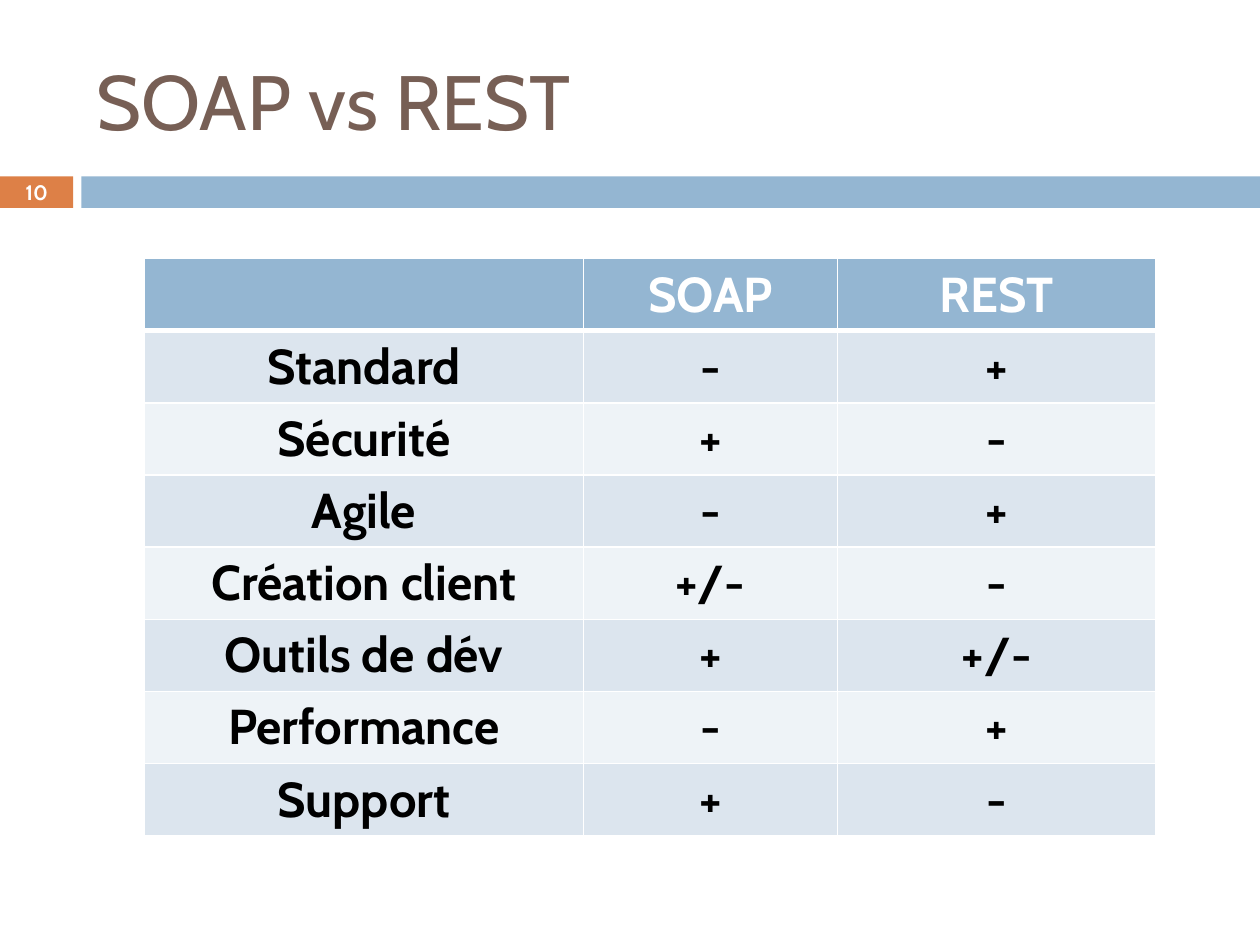
"""Build the SOAP vs REST comparison slide."""
from lxml.etree import SubElement
from pptx import Presentation
from pptx.dml.color import RGBColor as Rgb
from pptx.enum.shapes import MSO_SHAPE as Shape
from pptx.enum.text import MSO_ANCHOR as Anchor, PP_ALIGN as Align
from pptx.oxml.ns import qn
from pptx.util import Pt

TITLE = "SOAP vs REST"
PAGE_NUMBER = "10"
ROWS = [
    ("", "SOAP", "REST"),
    ("Standard", "-", "+"),
    ("Sécurité", "+", "-"),
    ("Agile", "-", "+"),
    ("Création client", "+/-", "-"),
    ("Outils de dév", "+", "+/-"),
    ("Performance", "-", "+"),
    ("Support", "+", "-"),
]
COLORS = {
    "title": "775F55", "orange": "DD8047", "blue": "94B6D2",
    "odd": "DCE5EE", "even": "EEF3F7", "white": "FFFFFF", "black": "000000",
}
FONT = "Cabin"
BAR_TOP, BAR_HEIGHT = 100.8, 18
NUMBER_WIDTH, BAR_LEFT = 41.8, 46.5
SLIDE_WIDTH, SLIDE_HEIGHT = 720, 540
TABLE_LEFT, TABLE_TOP, ROW_HEIGHT = 82.5, 147.8, 41
COLUMN_WIDTHS = (251, 145, 182)


def color(name):
    return Rgb.from_string(COLORS[name])


def write(frame, text, size, ink, align, bold=False):
    para = frame.paragraphs[0]
    para.text = text
    para.alignment = align
    font = para.font
    font.name, font.size, font.bold = FONT, Pt(size), bold
    font.color.rgb = color(ink)


def add_bar(page, left, width, fill):
    bar = page.shapes.add_shape(
        Shape.RECTANGLE, Pt(left), Pt(BAR_TOP), Pt(width), Pt(BAR_HEIGHT))
    bar.shadow.inherit = False
    bar.fill.solid()
    bar.fill.fore_color.rgb = color(fill)
    bar.line.fill.background()
    return bar


def add_borders(cell, widths):
    properties = cell._tc.get_or_add_tcPr()
    for side, width in widths.items():
        line = SubElement(properties, qn(f"a:ln{side}"), w=str(Pt(width)))
        fill = SubElement(line, qn("a:solidFill"))
        SubElement(fill, qn("a:srgbClr"), val=COLORS["white"])


def add_comparison(page):
    table = page.shapes.add_table(
        len(ROWS), len(COLUMN_WIDTHS), Pt(TABLE_LEFT), Pt(TABLE_TOP),
        Pt(sum(COLUMN_WIDTHS)), Pt(ROW_HEIGHT * len(ROWS))).table
    for column, width in zip(table.columns, COLUMN_WIDTHS):
        column.width = Pt(width)
    for index, texts in enumerate(ROWS):
        table.rows[index].height = Pt(ROW_HEIGHT)
        header = index == 0
        fill = "blue" if header else ("even", "odd")[index % 2]
        widths = {"L": 1, "R": 1, "T": 3 if index == 1 else 1, "B": 3 if header else 1}
        for cell, text in zip(table.rows[index].cells, texts):
            add_borders(cell, widths)
            cell.fill.solid()
            cell.fill.fore_color.rgb = color(fill)
            write(cell.text_frame, text, 28, "white" if header else "black",
                  Align.CENTER, bold=True)


def main():
    deck = Presentation()
    deck.slide_width, deck.slide_height = Pt(SLIDE_WIDTH), Pt(SLIDE_HEIGHT)
    page = deck.slides.add_slide(deck.slide_layouts[5])

    title = page.shapes.title
    title.left, title.top, title.width, title.height = Pt(48), Pt(18), Pt(642), Pt(78)
    title.text_frame.vertical_anchor = Anchor.MIDDLE
    write(title.text_frame, TITLE, 44, "title", Align.LEFT)

    number = add_bar(page, 0, NUMBER_WIDTH, "orange")
    frame = number.text_frame
    frame.margin_top = frame.margin_bottom = 0
    frame.vertical_anchor = Anchor.MIDDLE
    write(frame, PAGE_NUMBER, 12, "white", Align.CENTER, bold=True)
    add_bar(page, BAR_LEFT, SLIDE_WIDTH - BAR_LEFT, "blue")

    add_comparison(page)
    deck.save("out.pptx")


if __name__ == "__main__":
    main()
